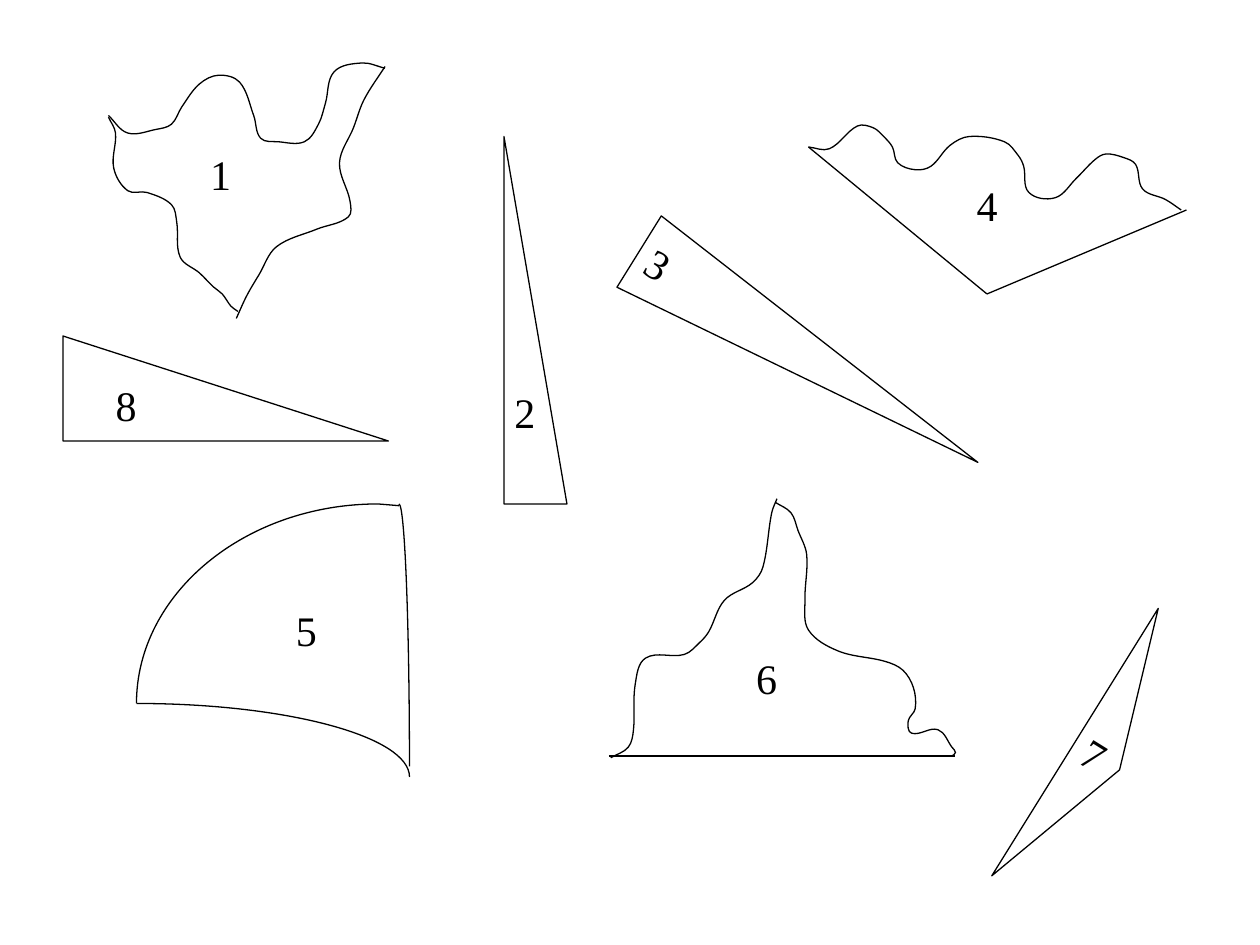
"""Build a slide of eight numbered puzzle pieces with straight, wavy and arched edges."""
from dataclasses import dataclass
from math import dist, hypot

from pptx import Presentation
from pptx.dml.color import RGBColor
from pptx.enum import shapes, text
from pptx.oxml import ns, xmlchemy
from pptx.util import Pt

BLACK = RGBColor(0, 0, 0)
ARC_HANDLE = 0.55
FONT = {"name": "Times New Roman", "size": Pt(24)}
CENTRED = {"word_wrap": False, "vertical_anchor": text.MSO_ANCHOR.MIDDLE}
LABEL = {"word_wrap": False, "auto_size": text.MSO_AUTO_SIZE.SHAPE_TO_FIT_TEXT}
RIGHT = shapes.MSO_SHAPE.RIGHT_TRIANGLE
ISOSCELES = shapes.MSO_SHAPE.ISOSCELES_TRIANGLE


@dataclass
class Triangle:
    kind: shapes.MSO_SHAPE
    box: tuple
    number: str = ""
    rotation: float = 0


@dataclass
class Piece:
    number: str
    label_at: tuple
    curves: tuple = ()
    edges: tuple = ()


def wave(*knots: tuple) -> list:
    """Pass a smooth curve through knots, each tangent parallel to its neighbours' chord."""
    before, after = (knots[0], *knots[:-1]), (*knots[1:], knots[-1])
    tangents = []
    for (x0, y0), (x1, y1) in zip(before, after):
        length = hypot(x1 - x0, y1 - y0)
        tangents.append(((x1 - x0) / length, (y1 - y0) / length))
    curve = [knots[0]]
    for i, (start, end) in enumerate(zip(knots, knots[1:])):
        reach = dist(start, end) / 3
        (ux, uy), (vx, vy) = tangents[i:i + 2]
        leave = (start[0] + reach * ux, start[1] + reach * uy)
        arrive = (end[0] - reach * vx, end[1] - reach * vy)
        curve += [leave, arrive, end]
    return curve


def quarter(start: tuple, end: tuple) -> list:
    """Draw a quarter ellipse that leaves level and arrives upright."""
    (x0, y0), (x1, y1) = start, end
    leave = (x0 + ARC_HANDLE * (x1 - x0), y0)
    arrive = (x1, y1 - ARC_HANDLE * (y1 - y0))
    return [start, leave, arrive, end]


CLOUD_TOP = wave(
    (62, 66), (73, 76), (89, 74), (98, 71), (104, 61), (114, 48), (125, 43),
    (137, 47), (145, 66), (149, 79), (159, 81), (174, 81), (182, 71), (186, 59),
    (191, 41), (207, 36), (220, 39))
CLOUD_RIGHT = wave(
    (220, 38), (208, 57), (202, 73), (194, 93), (200, 115), (199, 124),
    (181, 131), (158, 141), (148, 157), (141, 169), (135, 182))
CLOUD_LEFT = wave(
    (62, 67), (66, 76), (65, 96), (73, 109), (84, 110), (98, 117), (101, 127),
    (103, 147), (114, 156), (122, 164), (127, 168), (132, 175), (136, 178))
FAN_CREST = wave(
    (462, 84), (474, 85), (490, 72), (499, 73), (505, 78), (510, 84), (513, 93),
    (523, 97), (532, 95), (543, 83), (554, 78), (574, 81), (582, 89), (585, 95),
    (588, 110), (603, 113), (615, 102), (626, 91), (632, 88), (642, 90),
    (649, 94), (653, 108), (666, 114), (675, 120))
PEAK_LEFT = wave(
    (349, 433), (359, 427), (362, 417), (363, 391), (369, 376), (391, 374),
    (400, 367), (405, 361), (414, 343), (430, 333), (436, 324), (441, 293), (444, 285))
PEAK_RIGHT = wave(
    (443, 287), (452, 293), (456, 303), (461, 317), (460, 343), (462, 360),
    (479, 372), (506, 378), (516, 383), (522, 393), (523, 405), (519, 412),
    (521, 419), (536, 417), (544, 427), (546, 430), (544, 432))

SAIL_RIM = wave((228, 289), (216, 288)) + quarter((216, 288), (78, 402))[1:]
SAIL_HEM = quarter((78, 402), (234, 444))
SAIL_MAST = quarter((228, 288), (234, 438))

FAN_EDGES = ((462, 84, 564, 168), (564, 168, 678, 120))
PEAK_BASE = (348, 432, 546, 432)

TRIANGLES = (
    Triangle(RIGHT, (288, 78, 36, 210), "2"),
    Triangle(ISOSCELES, (438, 90, 48, 228), "3", 121.9),
    Triangle(ISOSCELES, (537, 417, 180, 30), "7", 121.9),
    Triangle(RIGHT, (36, 192, 186, 60)),
)
PIECES = (
    Piece("1", (113, 81.5), (CLOUD_TOP, CLOUD_RIGHT, CLOUD_LEFT)),
    Piece("4", (551, 99), (FAN_CREST,), FAN_EDGES),
    Piece("5", (162, 342), (SAIL_RIM, SAIL_HEM, SAIL_MAST)),
    Piece("6", (425, 369.5), (PEAK_LEFT, PEAK_RIGHT), (PEAK_BASE,)),
    Piece("8", (59, 213.5)),
)


def apply(target, values: dict) -> None:
    """Set every attribute listed in values on target."""
    for name, value in values.items():
        setattr(target, name, value)


def ink(outline) -> None:
    """Give a line its thin black stroke."""
    outline.width = Pt(0.75)
    outline.color.rgb = BLACK


def hollow(shape) -> None:
    """Leave a shape with only its outline."""
    shape.shadow.inherit = False
    shape.fill.background()
    ink(shape.line)


def write(shape, number: str, layout: dict, alignment: text.PP_ALIGN) -> None:
    """Write a piece number in a shape."""
    apply(shape.text_frame, layout)
    paragraph = shape.text_frame.paragraphs[0]
    paragraph.alignment = alignment
    run = paragraph.add_run()
    run.text = number
    apply(run.font, FONT)
    run.font.color.rgb = BLACK


def draw_curve(canvas, curve: list) -> None:
    """Draw a start point followed by two controls and an end per segment."""
    start, *rest = [(Pt(x), Pt(y)) for x, y in curve]
    builder = canvas.build_freeform(*start)
    builder.add_line_segments(rest, close=False)
    shape = builder.convert_to_shape()
    hollow(shape)
    route = next(shape._element.iter(ns.qn("a:path")))
    steps = iter(route.findall(ns.qn("a:lnTo")))
    for segment in zip(steps, steps, steps):
        bezier = xmlchemy.OxmlElement("a:cubicBezTo")
        for step in segment:
            bezier.append(step[0])
            route.remove(step)
        route.append(bezier)


def draw_edge(canvas, ends: tuple) -> None:
    """Draw a straight edge."""
    edge = canvas.add_connector(shapes.MSO_CONNECTOR.STRAIGHT, *map(Pt, ends))
    ink(edge.line)
    edge._element.spPr.append(xmlchemy.OxmlElement("a:effectLst"))


def draw_triangle(canvas, triangle: Triangle) -> None:
    """Draw a triangle, its number turned along with it."""
    shape = canvas.add_shape(triangle.kind, *map(Pt, triangle.box))
    hollow(shape)
    shape.rotation = triangle.rotation
    if triangle.number:
        write(shape, triangle.number, CENTRED, text.PP_ALIGN.CENTER)
    if triangle.rotation:
        body = shape.text_frame._txBody.bodyPr
        body.set("rot", "10800000")
        body.set("vert", "eaVert")


def draw_piece(canvas, piece: Piece) -> None:
    """Draw a grouped outline and its number."""
    if piece.curves:
        outline = canvas.add_group_shape().shapes
        for ends in piece.edges:
            draw_edge(outline, ends)
        for curve in piece.curves:
            draw_curve(outline, curve)
    label = canvas.add_textbox(*map(Pt, (*piece.label_at, 27, 36)))
    write(label, piece.number, LABEL, text.PP_ALIGN.LEFT)


def main() -> None:
    """Assemble and save the slide."""
    deck = Presentation()
    apply(deck, {"slide_width": Pt(720), "slide_height": Pt(540)})
    canvas = deck.slides.add_slide(deck.slide_layouts[6]).shapes
    for triangle in TRIANGLES:
        draw_triangle(canvas, triangle)
    for piece in PIECES:
        draw_piece(canvas, piece)
    deck.save("out.pptx")


if __name__ == "__main__":
    main()
